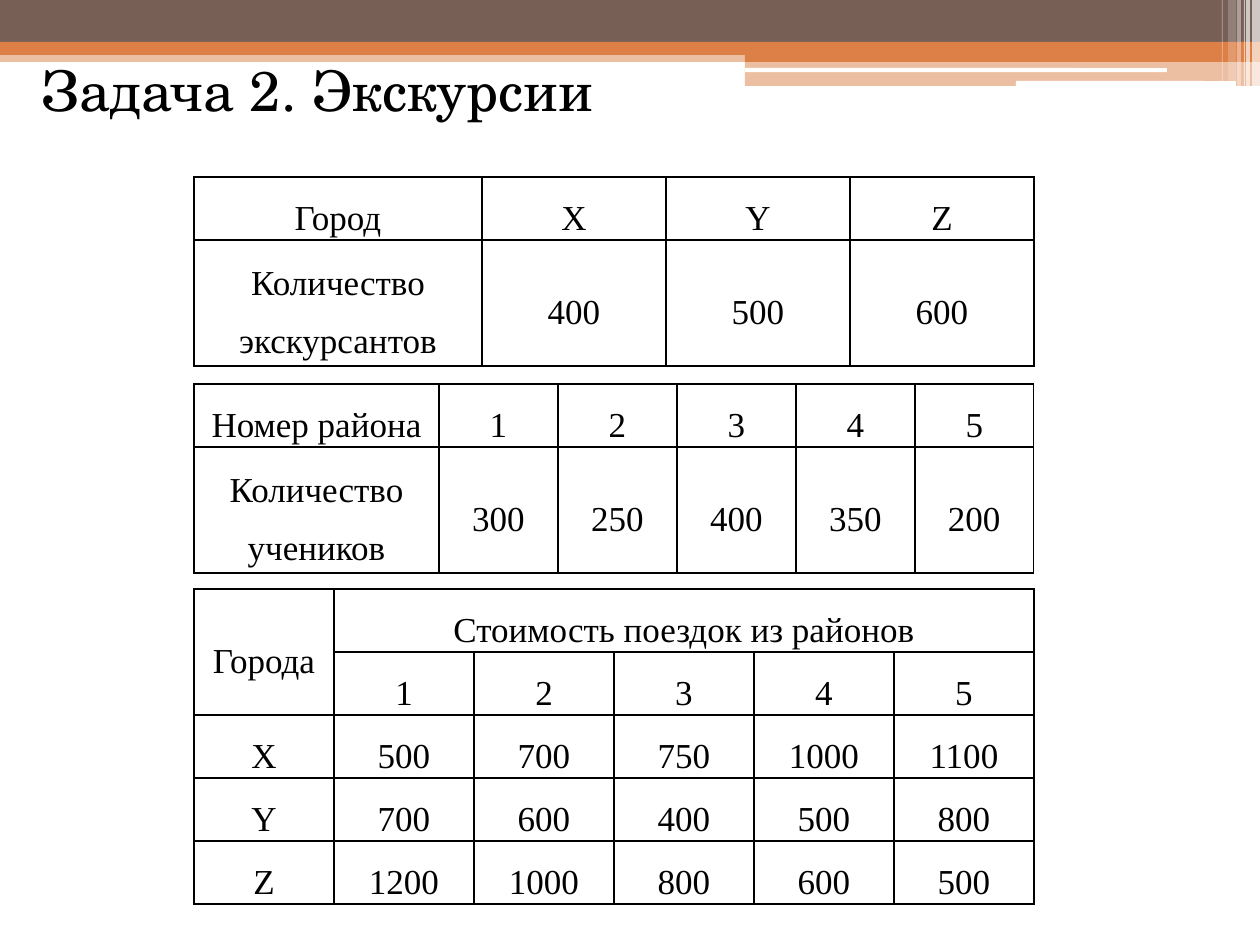
from dataclasses import dataclass

from lxml.etree import SubElement
from pptx import Presentation
from pptx.dml.color import RGBColor
from pptx.enum.shapes import MSO_SHAPE
from pptx.enum.text import MSO_ANCHOR, PP_ALIGN
from pptx.oxml.ns import qn
from pptx.util import Pt

EMU_PER_PX = 914400 / 126


def px(length):
    return round(length * EMU_PER_PX)


@dataclass(frozen=True)
class Theme:
    brown: str = "775F55"
    orange: str = "DD8047"
    white: str = "FFFFFF"
    ink: str = "000000"
    title_font: str = "TeX Gyre Schola"
    table_font: str = "Times New Roman"
    title_size: int = 32
    table_size: int = 20
    line_spacing: float = 1.5
    border_width: int = 1
    cell_margin: int = 9


class SlideBuilder:
    def __init__(self, slide, theme):
        self.slide = slide
        self.theme = theme

    def band(self, left, top, width, height, color, alpha=100, rounded=False):
        preset = MSO_SHAPE.ROUNDED_RECTANGLE if rounded else MSO_SHAPE.RECTANGLE
        band = self.slide.shapes.add_shape(
            preset, px(left), px(top), px(width), px(height)
        )
        band.shadow.inherit = False
        band.line.fill.background()
        band.fill.solid()
        band.fill.fore_color.rgb = RGBColor.from_string(color)
        if alpha < 100:
            tint = band.element.spPr.find(qn("a:solidFill"))[0]
            SubElement(tint, qn("a:alpha"), val=str(alpha * 1000))

    def add_words(self, paragraph, words, font, size):
        run = paragraph.add_run()
        run.text = words
        run.font.name = font
        run.font.size = Pt(size)
        run.font.color.rgb = RGBColor.from_string(self.theme.ink)

    def title(self, words, left, top, width, height):
        box = self.slide.shapes.add_textbox(px(left), px(top), px(width), px(height))
        box.text_frame.word_wrap = True
        self.add_words(
            box.text_frame.paragraphs[0],
            words,
            self.theme.title_font,
            self.theme.title_size,
        )

    def border(self, cell):
        properties = cell._tc.get_or_add_tcPr()
        for side in ("lnL", "lnR", "lnT", "lnB"):
            edge = SubElement(
                properties, qn(f"a:{side}"), w=str(Pt(self.theme.border_width))
            )
            fill = SubElement(edge, qn("a:solidFill"))
            SubElement(fill, qn("a:srgbClr"), val=self.theme.ink)

    def cell(self, cell, words):
        self.border(cell)
        cell.fill.background()
        cell.vertical_anchor = MSO_ANCHOR.MIDDLE
        cell.margin_left = cell.margin_right = px(self.theme.cell_margin)
        cell.margin_top = cell.margin_bottom = 0
        paragraph = cell.text_frame.paragraphs[0]
        paragraph.alignment = PP_ALIGN.CENTER
        paragraph.line_spacing = self.theme.line_spacing
        if words:
            self.add_words(
                paragraph, words, self.theme.table_font, self.theme.table_size
            )

    def table(self, left, top, columns, heights, rows, merges=()):
        table = self.slide.shapes.add_table(
            len(heights), len(columns), px(left), px(top),
            px(sum(columns)), px(sum(heights)),
        ).table
        table.first_row = table.horz_banding = False
        for column, width in zip(table.columns, columns):
            column.width = px(width)
        for row, height, values in zip(table.rows, heights, rows):
            row.height = px(height)
            for cell, words in zip(row.cells, values):
                self.cell(cell, words)
        for first, last in merges:
            table.cell(*first).merge(table.cell(*last))


def main():
    presentation = Presentation()
    presentation.slide_width = px(1260)
    presentation.slide_height = px(945)
    slide = presentation.slides.add_slide(presentation.slide_layouts[6])
    theme = Theme()
    builder = SlideBuilder(slide, theme)

    builder.band(0, 50, 1260, 12, theme.orange, 50)
    builder.band(0, 0, 1260, 43, theme.brown)
    builder.band(0, 42, 1260, 13, theme.orange)
    builder.band(745, 49, 515, 13, theme.orange)
    builder.band(745, 61, 515, 25, theme.orange, 50)
    builder.band(745, 68, 422, 4, theme.white, rounded=True)
    builder.band(1016, 81, 220, 5, theme.white, rounded=True)
    stripes = [
        (1252, 8, 86, 65),
        (1246, 4, 86, 65),
        (1244, 1, 86, 60),
        (1237, 4, 86, 40),
        (1228, 8, 81, 20),
        (1222, 1, 81, 30),
    ]
    for left, width, height, alpha in stripes:
        builder.band(left, 0, width, height, theme.white, alpha)

    builder.title("Задача 2. Экскурсии", 29, 49, 699, 81)

    tables_left, row_height = 194, 63
    paired_rows = [row_height, 2 * row_height]
    districts = ["1", "2", "3", "4", "5"]
    builder.table(
        tables_left, 589, [140] * 6, [row_height] * 5,
        [
            ["Города", "Стоимость поездок из районов", "", "", "", ""],
            ["", *districts],
            ["X", "500", "700", "750", "1000", "1100"],
            ["Y", "700", "600", "400", "500", "800"],
            ["Z", "1200", "1000", "800", "600", "500"],
        ],
        merges=[((0, 0), (1, 0)), ((0, 1), (0, 5))],
    )
    builder.table(
        tables_left, 384, [245] + [119] * 5, paired_rows,
        [
            ["Номер района", *districts],
            ["Количество учеников", "300", "250", "400", "350", "200"],
        ],
    )
    builder.table(
        tables_left, 177, [288] + [184] * 3, paired_rows,
        [
            ["Город", "X", "Y", "Z"],
            ["Количество экскурсантов", "400", "500", "600"],
        ],
    )
    presentation.save("out.pptx")


if __name__ == "__main__":
    main()
